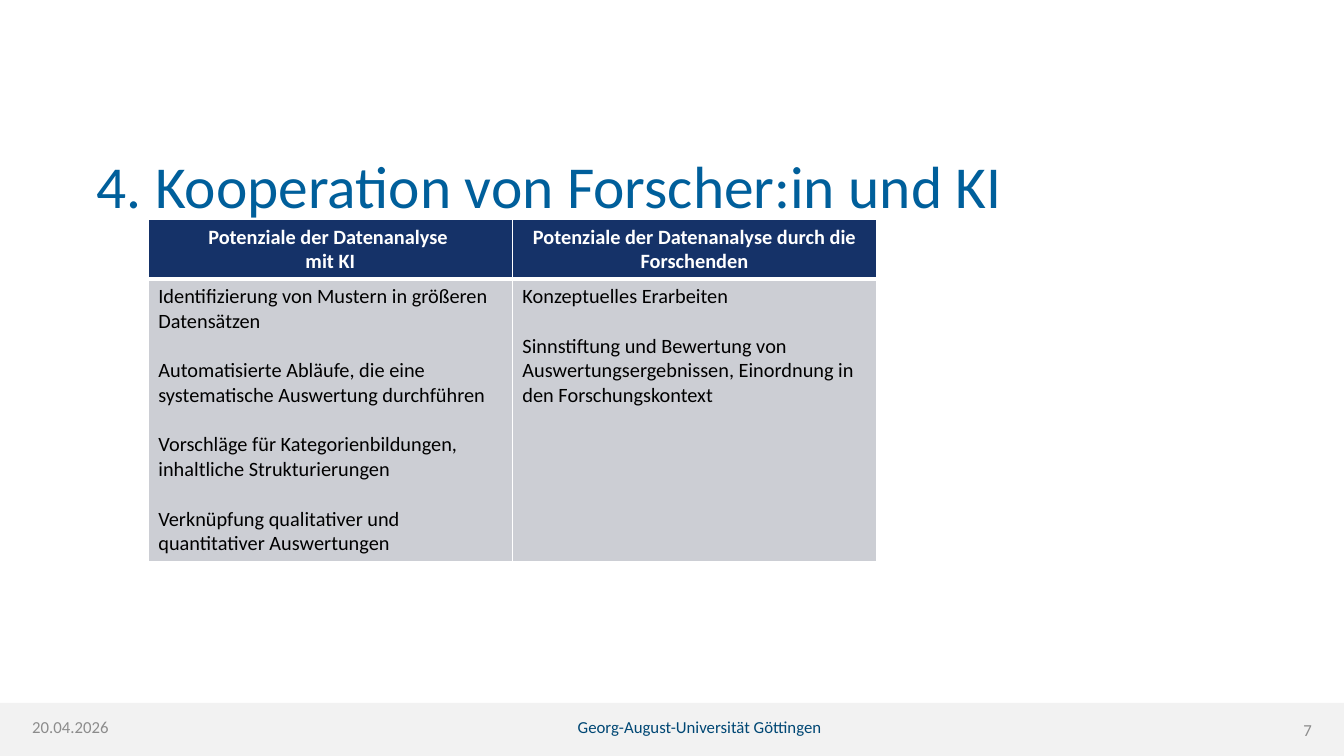
"""Build the slide on how researchers and AI work together."""
import pptx
import pptx.dml.color
import pptx.enum.shapes
import pptx.enum.text
import pptx.oxml
import pptx.oxml.ns
import pptx.util

Pt = pptx.util.Pt
RGB = pptx.dml.color.RGBColor
ALIGN = pptx.enum.text.PP_ALIGN

WHITE = RGB(0xFF, 0xFF, 0xFF)
BLACK = RGB(0, 0, 0)
BLUE = RGB(0x00, 0x5F, 0x9B)
DEEP = RGB(0x00, 0x47, 0x74)
NAVY = RGB(0x15, 0x32, 0x68)
GREY = RGB(0x8C, 0x8C, 0x8C)
CELL = RGB(0xCC, 0xCE, 0xD4)
PALE = RGB(0xF2, 0xF2, 0xF2)

WIDE, HIGH = 960.5, 540
BAR = 38
HEADS = [
    ["Potenziale der Datenanalyse ", "mit KI"],
    ["Potenziale der Datenanalyse durch die Forschenden"],
]
POINTS = [
    [
        "Identifizierung von Mustern in größeren Datensätzen",
        "Automatisierte Abläufe, die eine systematische Auswertung durchführen",
        "Vorschläge für Kategorienbildungen, inhaltliche Strukturierungen",
        "Verknüpfung qualitativer und quantitativer Auswertungen",
    ],
    [
        "Konzeptuelles Erarbeiten",
        "Sinnstiftung und Bewertung von Auswertungsergebnissen, "
        "Einordnung in den Forschungskontext",
    ],
]


def write(frame, lines, size=12, color=BLACK, bold=False, align=ALIGN.LEFT, gap=0):
    """Fill a text frame with one paragraph per line."""
    frame.word_wrap = True
    for i, line in enumerate(lines):
        para = frame.paragraphs[0] if i == 0 else frame.add_paragraph()
        para.alignment = align
        para.space_before = Pt(gap if i else 0)
        run = para.add_run()
        run.text = line
        run.font.name = "Calibri"
        run.font.size = Pt(size)
        run.font.bold = bold
        run.font.color.rgb = color


def strip(frame):
    """Remove the margins of a frame and hold its text at the top."""
    frame.margin_left = frame.margin_right = Pt(0)
    frame.margin_top = frame.margin_bottom = Pt(0)
    frame.vertical_anchor = pptx.enum.text.MSO_ANCHOR.TOP
    frame.auto_size = pptx.enum.text.MSO_AUTO_SIZE.NONE


def title(slide, text):
    """Place and format the title."""
    shape = slide.shapes.title
    shape.left, shape.top = Pt(69), Pt(103.7)
    shape.width, shape.height = Pt(800.6), Pt(45.4)
    strip(shape.text_frame)
    shape.text_frame.margin_top = Pt(2.5)
    write(shape.text_frame, [text], size=42.5, color=BLUE)


def bar(slide):
    """Draw the pale bar along the foot of the slide."""
    kind = pptx.enum.shapes.MSO_SHAPE.RECTANGLE
    shape = slide.shapes.add_shape(kind, 0, Pt(HIGH - BAR), Pt(WIDE), Pt(BAR))
    shape.shadow.inherit = False
    shape.fill.solid()
    shape.fill.fore_color.rgb = PALE
    shape.line.fill.background()


def label(slide, text, left, top, width, **form):
    """Add a line of text to the foot bar."""
    box = slide.shapes.add_textbox(Pt(left), Pt(top), Pt(width), Pt(15))
    strip(box.text_frame)
    write(box.text_frame, [text], **form)


def edge(cell, sides):
    """Give a cell white borders, from a map of side to width."""
    props = cell._tc.get_or_add_tcPr()
    space = pptx.oxml.ns.nsdecls("a")
    for side, width in sides.items():
        props.append(pptx.oxml.parse_xml(
            f'<a:ln{side} {space} w="{Pt(width)}"><a:solidFill>'
            f'<a:srgbClr val="{WHITE}"/></a:solidFill></a:ln{side}>'))


def table(slide):
    """Add the table that compares AI with researchers."""
    rows = [
        (HEADS, 42.5, NAVY, {"L": 1, "R": 1, "T": 1, "B": 3},
         dict(color=WHITE, bold=True, align=ALIGN.CENTER)),
        (POINTS, 200.5, CELL, {"L": 1, "R": 1, "T": 3, "B": 1},
         dict(gap=17.7)),
    ]
    high = sum(row[1] for row in rows)
    grid = slide.shapes.add_table(2, 2, Pt(106), Pt(157), Pt(520.4), Pt(high)).table
    for r, (texts, height, fill, sides, form) in enumerate(rows):
        grid.rows[r].height = Pt(height)
        for c, lines in enumerate(texts):
            cell = grid.cell(r, c)
            edge(cell, sides)
            cell.fill.solid()
            cell.fill.fore_color.rgb = fill
            write(cell.text_frame, lines, size=14.5, **form)


def main():
    """Build and save the slide."""
    deck = pptx.Presentation()
    deck.slide_width, deck.slide_height = Pt(WIDE), Pt(HIGH)
    slide = deck.slides.add_slide(deck.slide_layouts[5])
    bar(slide)
    title(slide, "4. Kooperation von Forscher:in und KI")
    label(slide, "Georg-August-Universität Göttingen", 182, 512, 636,
          color=DEEP, align=ALIGN.CENTER)
    label(slide, "20.04.2026", 23, 512, 108, color=GREY)
    label(slide, "7", 874, 514, 63.5, color=GREY, align=ALIGN.RIGHT)
    table(slide)
    deck.save("out.pptx")


if __name__ == "__main__":
    main()
